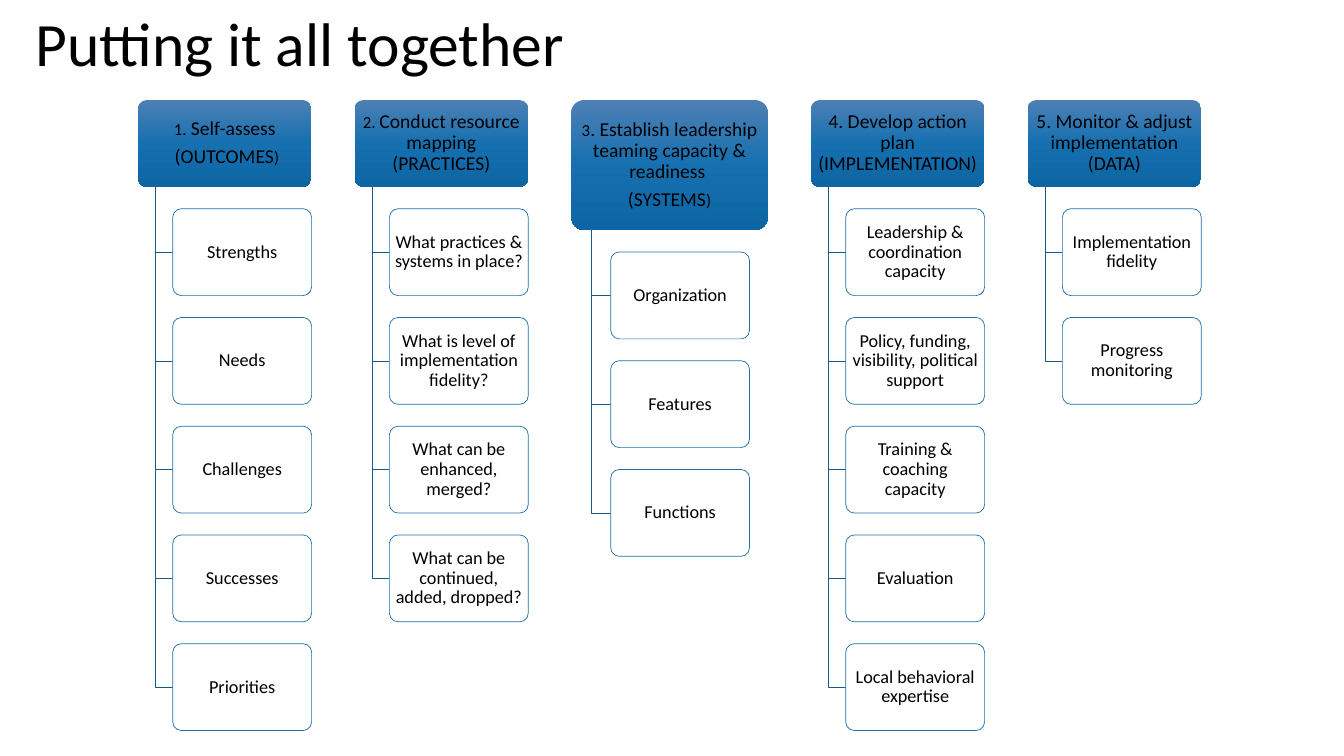
"""Builds the slide that sums up five planning steps and their parts."""
from copy import deepcopy
from dataclasses import dataclass

from lxml import etree
from pptx import Presentation
from pptx import util as u
from pptx.dml.color import RGBColor
from pptx.enum import shapes, text
from pptx.oxml.ns import qn
from pptx.shapes.autoshape import Shape
from pptx.shapes.shapetree import SlideShapes
from pptx.text.text import TextFrame


@dataclass(frozen=True)
class Theme:
    """Colours, font and type sizes of the slide."""
    font: str = "Calibri"
    ink: str = "000000"
    paper: str = "FFFFFF"
    outline: str = "1D6FA9"
    branch: str = "175987"
    gradient: tuple[str, ...] = ("4E80B5", "1670B0", "0D65A3")
    title: float = 44
    heading: float = 14
    small: float = 12
    item: float = 13
    hairline: float = 0.5
    paper_opacity: int = 90000


@dataclass(frozen=True)
class Run:
    """A stretch of text in one size."""
    words: str
    size: float


@dataclass(frozen=True)
class Step:
    """A heading with the items that hang below it."""
    heading: list[list[Run]]
    items: list[str]
    width: float = 4.37
    height: float = 2.19


THEME = Theme()
BIG, SMALL = THEME.heading, THEME.small
LEFT, TOP, COLUMN_GAP = 3.48, 2.52, 1.09
ITEM_WIDTH, ITEM_HEIGHT, ITEM_GAP = 3.5, 2.19, 0.55
CORNER, INDENT = 0.1, 0.1

STEPS = [
    Step([[Run("1.", SMALL), Run(" Self-assess", BIG)],
          [Run(" (OUTCOMES", BIG), Run(")", SMALL)]],
         ["Strengths", "Needs", "Challenges", "Successes", "Priorities"]),
    Step([[Run("2. ", SMALL), Run("Conduct resource mapping (PRACTICES)", BIG)]],
         ["What practices & systems in place?",
          "What is level of implementation fidelity?",
          "What can be enhanced, merged?",
          "What can be continued, added, dropped?"]),
    Step([[Run("3", SMALL),
           Run(". Establish leadership teaming capacity & readiness ", BIG)],
          [Run("(SYSTEMS", BIG), Run(")", SMALL)]],
         ["Organization", "Features", "Functions"], width=4.95, height=3.28),
    Step([[Run("4. Develop action plan (IMPLEMENTATION)", BIG)]],
         ["Leadership & coordination capacity",
          "Policy, funding, visibility, political support",
          "Training & coaching capacity",
          "Evaluation",
          "Local behavioral expertise"]),
    Step([[Run("5. Monitor & adjust implementation (DATA)", BIG)]],
         ["Implementation fidelity", "Progress monitoring"]),
]


def write(frame: TextFrame, paragraphs: list[list[Run]], align: text.PP_ALIGN) -> None:
    """Fill a text frame with paragraphs made of runs."""
    frame.word_wrap = True
    frame.vertical_anchor = text.MSO_ANCHOR.MIDDLE
    for index, runs in enumerate(paragraphs):
        paragraph = frame.add_paragraph() if index else frame.paragraphs[0]
        is_last = index == len(paragraphs) - 1
        layout = {"alignment": align, "line_spacing": 0.9,
                  "space_after": u.Pt(0 if is_last else 5)}
        for key, value in layout.items():
            setattr(paragraph, key, value)
        for run in runs:
            piece = paragraph.add_run()
            piece.text = run.words
            for key, value in {"name": THEME.font, "size": u.Pt(run.size)}.items():
                setattr(piece.font, key, value)
            piece.font.color.rgb = RGBColor.from_string(THEME.ink)


def add_card(canvas: SlideShapes, x: float, y: float, width: float, height: float,
             paragraphs: list[list[Run]]) -> Shape:
    """Add a rounded box with centred text."""
    card = canvas.add_shape(shapes.MSO_SHAPE.ROUNDED_RECTANGLE,
                            u.Cm(x), u.Cm(y), u.Cm(width), u.Cm(height))
    card.adjustments[0] = CORNER
    card.shadow.inherit = False
    margins = {"margin_left": 0.07, "margin_right": 0.07,
               "margin_top": 0.05, "margin_bottom": 0.05}
    for key, value in margins.items():
        setattr(card.text_frame, key, u.Cm(value))
    write(card.text_frame, paragraphs, text.PP_ALIGN.CENTER)
    return card


def add_heading(canvas: SlideShapes, x: float, step: Step) -> None:
    """Add the shaded box that heads a column."""
    heading = add_card(canvas, x, TOP, step.width, step.height, step.heading)
    heading.line.fill.background()
    heading.fill.gradient()
    heading.fill.gradient_angle = 270
    stops = heading._element.spPr.find(".//" + qn("a:gsLst"))
    stops.insert(1, deepcopy(stops[0]))
    for index, (stop, color) in enumerate(zip(heading.fill.gradient_stops, THEME.gradient)):
        stop.position = index / 2
        stop.color.rgb = RGBColor.from_string(color)


def set_line(shape: Shape, color: str) -> None:
    """Give a shape a thin line."""
    shape.line.color.rgb = RGBColor.from_string(color)
    shape.line.width = u.Pt(THEME.hairline)


def add_branch(canvas: SlideShapes, x: float, top: float, end_x: float, end_y: float) -> None:
    """Add the bent line from a heading to an item."""
    builder = canvas.build_freeform(u.Cm(x), u.Cm(top))
    builder.add_line_segments([(u.Cm(x), u.Cm(end_y)), (u.Cm(end_x), u.Cm(end_y))],
                              close=False)
    branch = builder.convert_to_shape()
    branch.fill.background()
    branch.shadow.inherit = False
    set_line(branch, THEME.branch)


def add_item(canvas: SlideShapes, x: float, y: float, words: str) -> None:
    """Add an outlined item box."""
    item = add_card(canvas, x, y, ITEM_WIDTH, ITEM_HEIGHT, [[Run(words, THEME.item)]])
    item.fill.solid()
    item.fill.fore_color.rgb = RGBColor.from_string(THEME.paper)
    color = item._element.spPr.find(qn("a:solidFill"))[0]
    etree.SubElement(color, qn("a:alpha"), val=str(THEME.paper_opacity))
    set_line(item, THEME.outline)


def add_step(canvas: SlideShapes, x: float, step: Step) -> None:
    """Add a column: heading, branches and items."""
    add_heading(canvas, x, step)
    bottom = TOP + step.height
    branch_x = x + INDENT * step.width
    item_x = x + 2 * INDENT * step.width
    for index, words in enumerate(step.items):
        y = bottom + ITEM_GAP + index * (ITEM_HEIGHT + ITEM_GAP)
        add_branch(canvas, branch_x, bottom, item_x, y + ITEM_HEIGHT / 2)
        add_item(canvas, item_x, y, words)


def main() -> None:
    """Build and save the slide."""
    deck = Presentation()
    deck.slide_width, deck.slide_height = u.Cm(33.87), u.Cm(19.05)
    canvas = deck.slides.add_slide(deck.slide_layouts[6]).shapes
    title = canvas.add_textbox(u.Cm(0.64), u.Cm(0.18), u.Cm(20.93), u.Cm(1.98))
    write(title.text_frame, [[Run("Putting it all together", THEME.title)]],
          text.PP_ALIGN.LEFT)
    x = LEFT
    for step in STEPS:
        add_step(canvas, x, step)
        x += step.width + COLUMN_GAP
    deck.save("out.pptx")


if __name__ == "__main__":
    main()
